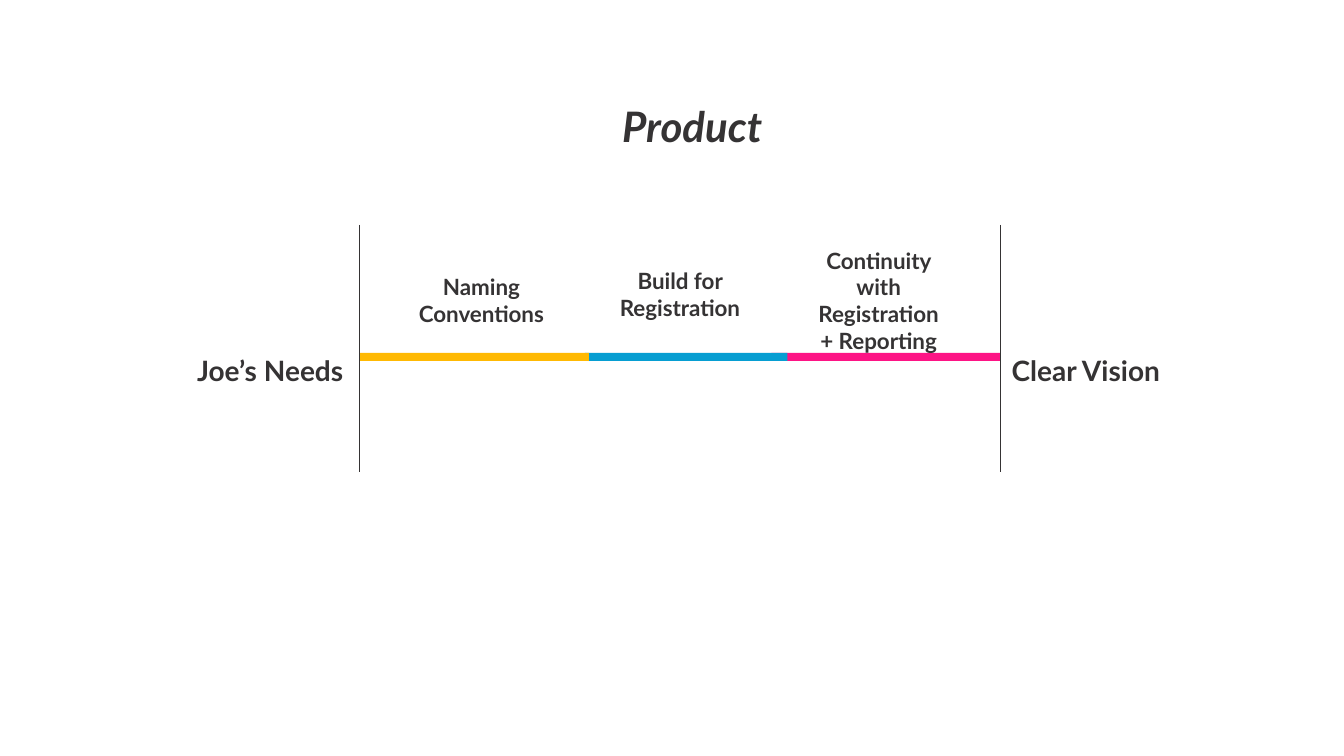
"""Build the Product slide: a three-part path from Joe's Needs to Clear Vision."""
import dataclasses

import pptx
import pptx.dml.color
import pptx.enum.shapes
import pptx.enum.text
import pptx.oxml
import pptx.oxml.ns
import pptx.util

Inches = pptx.util.Inches
Anchor = pptx.enum.text.MSO_ANCHOR
Align = pptx.enum.text.PP_ALIGN

COLOURS = {"ink": "353334", "orange": "FFB903", "blue": "079ED2", "pink": "FD1485"}
FONT_FORMAT = {"name": "Lato", "bold": True}
FRAME_FORMAT = {
    "word_wrap": True,
    "auto_size": pptx.enum.text.MSO_AUTO_SIZE.NONE,
    "margin_left": Inches(0.1),
    "margin_top": Inches(0.1),
    "margin_right": Inches(0.1),
    "margin_bottom": Inches(0.1),
}
PATH_LEFT, PATH_RIGHT = 3.57, 9.92
PATH_TOP, PATH_HEIGHT = 3.5, 0.08
POST_TOP, POST_BOTTOM = 2.23, 4.68
END_WIDTH, END_HEIGHT = 1.7, 1.22
STEP_WIDTH, STEP_HEIGHT = 1.57, 0.52
LABEL_TOP = 2.72


@dataclasses.dataclass(frozen=True)
class Segment:
    """A coloured part of the path."""
    left: float
    width: float
    colour: str


@dataclasses.dataclass(frozen=True)
class Label:
    """A text with its place and format."""
    text: str
    left: float
    top: float
    width: float
    height: float
    size: int
    anchor: Anchor
    spacing: float = 1.0
    align: Align = Align.CENTER
    italic: bool = False


TITLE = Label("Product", 6.07, 0.9, 1.62, 0.63, 30, Anchor.TOP, align=Align.LEFT, italic=True)
SEGMENTS = [
    Segment(7.65, 2.27, "pink"),
    Segment(5.8, 2.01, "blue"),
    Segment(PATH_LEFT, 2.27, "orange"),
]
STEPS = [
    Label(text, 3.99 + 1.97 * index, top, STEP_WIDTH, STEP_HEIGHT, 16, anchor)
    for index, (text, top, anchor) in enumerate([
        ("Naming Conventions", LABEL_TOP, Anchor.MIDDLE),
        ("Build for Registration", 2.76, Anchor.BOTTOM),
        ("Continuity with Registration + Reporting", LABEL_TOP, Anchor.MIDDLE),
    ])
]
ENDS = [
    Label(text, left, LABEL_TOP, END_WIDTH, END_HEIGHT, 20, Anchor.BOTTOM, 1.15)
    for text, left in [("Joe’s Needs", 1.83), ("Clear Vision", PATH_RIGHT)]
]


def set_attributes(target: object, values: dict) -> None:
    """Set each named attribute of the target."""
    for name, value in values.items():
        setattr(target, name, value)


def colour_of(name: str) -> pptx.dml.color.RGBColor:
    """Look up a colour by name."""
    return pptx.dml.color.RGBColor.from_string(COLOURS[name])


def write_label(shape, label: Label) -> None:
    """Place a text shape and fill it with its label."""
    set_attributes(shape, {
        "left": Inches(label.left),
        "top": Inches(label.top),
        "width": Inches(label.width),
        "height": Inches(label.height),
    })
    frame = shape.text_frame
    frame.text = label.text
    set_attributes(frame, FRAME_FORMAT | {"vertical_anchor": label.anchor})
    paragraph = frame.paragraphs[0]
    set_attributes(paragraph, {"alignment": label.align, "line_spacing": label.spacing})
    font = paragraph.runs[0].font
    size = pptx.util.Pt(label.size)
    set_attributes(font, FONT_FORMAT | {"size": size, "italic": label.italic})
    font.color.rgb = colour_of("ink")


def add_segment(slide, segment: Segment) -> None:
    """Draw one part of the path."""
    shape = slide.shapes.add_shape(
        pptx.enum.shapes.MSO_SHAPE.RECTANGLE, Inches(segment.left), Inches(PATH_TOP),
        Inches(segment.width), Inches(PATH_HEIGHT))
    shape.shadow.inherit = False
    shape.fill.solid()
    shape.fill.fore_color.rgb = colour_of(segment.colour)
    shape.line.fill.background()


def add_post(slide, left: float) -> None:
    """Draw a vertical line at one end of the path."""
    connector = slide.shapes.add_connector(
        pptx.enum.shapes.MSO_CONNECTOR.STRAIGHT,
        Inches(left), Inches(POST_TOP), Inches(left), Inches(POST_BOTTOM))
    connector.line.color.rgb = colour_of("ink")
    connector.line.width = pptx.util.Pt(0.75)
    properties = connector.element.find(pptx.oxml.ns.qn("p:spPr"))
    properties.append(pptx.oxml.parse_xml(f"<a:effectLst {pptx.oxml.ns.nsdecls('a')}/>"))


def main() -> None:
    """Build and save the presentation."""
    presentation = pptx.Presentation()
    set_attributes(presentation, {"slide_width": Inches(13.33), "slide_height": Inches(7.5)})
    slide = presentation.slides.add_slide(presentation.slide_layouts.get_by_name("Title Only"))
    write_label(slide.shapes.title, TITLE)
    for segment in SEGMENTS:
        add_segment(slide, segment)
    for left in (PATH_LEFT, PATH_RIGHT):
        add_post(slide, left)
    for label in STEPS + ENDS:
        write_label(slide.shapes.add_textbox(0, 0, 0, 0), label)
    presentation.save("out.pptx")


if __name__ == "__main__":
    main()
